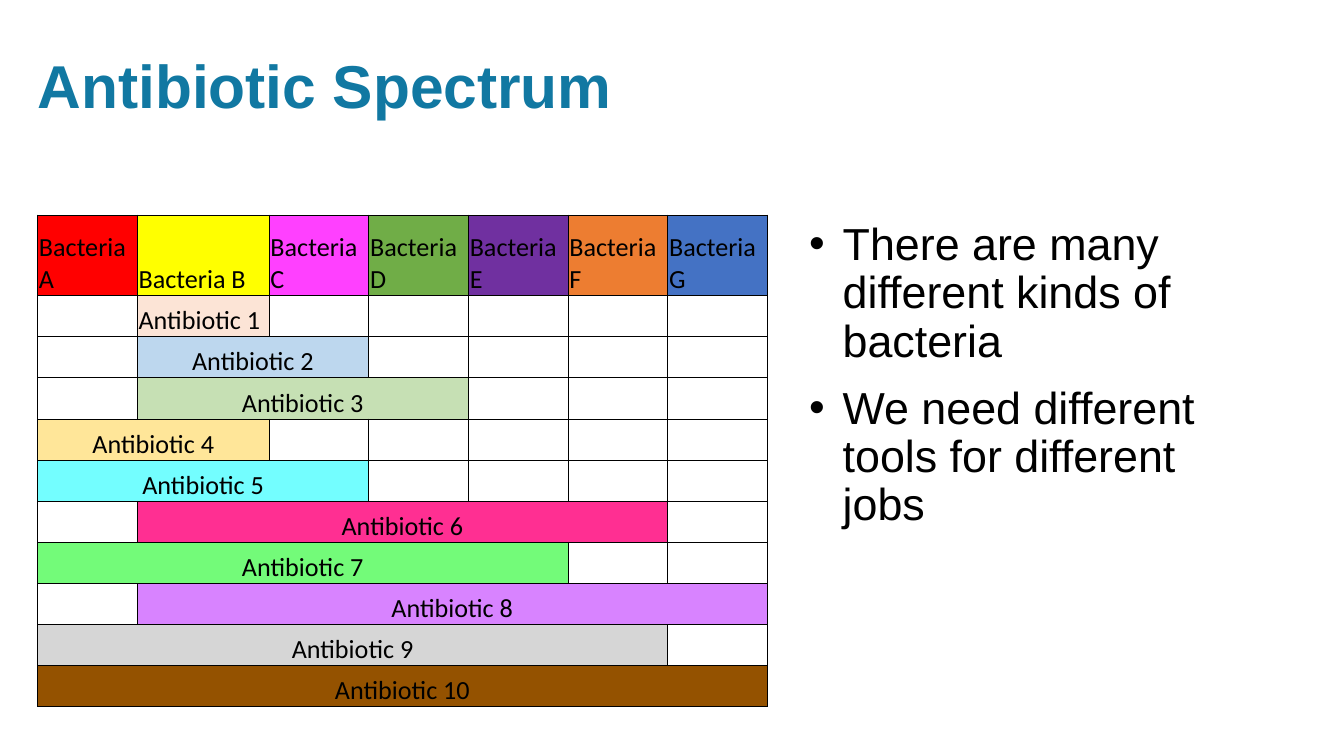
from dataclasses import dataclass

from lxml import etree
from pptx import Presentation
from pptx.dml.color import RGBColor
from pptx.enum.text import MSO_ANCHOR, MSO_AUTO_SIZE, PP_ALIGN
from pptx.oxml.ns import qn
from pptx.util import Inches, Pt

LEFT, CENTER = PP_ALIGN.LEFT, PP_ALIGN.CENTER
TOP, BOTTOM = MSO_ANCHOR.TOP, MSO_ANCHOR.BOTTOM
NO_FIT = MSO_AUTO_SIZE.NONE
TITLE_AND_CONTENT = 1


@dataclass(frozen=True)
class Theme:
    heading_font: str = "Arial"
    table_font: str = "Calibri"
    title_color: str = "1178A2"
    ink: str = "000000"
    title_size: float = 32.4
    list_size: float = 24
    table_size: float = 14
    border_width: float = 0.5
    leading: float = 0.9


THEME = Theme()
SLIDE_WIDTH = 10
SLIDE_HEIGHT = SLIDE_WIDTH * 9 / 16
LEFT_EDGE, CONTENT_TOP = 0.28, 1.6
TITLE_BOX = (LEFT_EDGE, 0.37, 4.48, 1.09)
SPECTRUM_BOX = (LEFT_EDGE, CONTENT_TOP, 5.43, 3.66)
LIST_BOX = (6.02, CONTENT_TOP, 3.37, 3.44)
HEADER_HEIGHT = 0.6
COLUMN_SHARES = [0.74, 0.98] + [0.74] * 5

BACTERIA_COLORS = ["FF0000", "FFFF00", "FF40FF", "70AD47", "7030A0", "ED7D31", "4472C4"]
ANTIBIOTICS = [
    (1, 1, "FCE4D6"),
    (1, 2, "BDD7EE"),
    (1, 3, "C6E0B4"),
    (0, 2, "FFE699"),
    (0, 3, "73FEFF"),
    (1, 5, "FF2F92"),
    (0, 5, "73FB79"),
    (1, 6, "D883FF"),
    (0, 6, "D6D6D6"),
    (0, 7, "945200"),
]
POINTS = [
    "There are many different kinds of bacteria",
    "We need different tools for different jobs",
]


def add_run(paragraph, text, font, size, color, bold=False):
    run = paragraph.add_run()
    run.text = text
    run.font.name = font
    run.font.size = Pt(size)
    run.font.bold = bold
    run.font.color.rgb = RGBColor.from_string(color)


def place(placeholder, box, right_inset):
    placeholder.left, placeholder.top, placeholder.width, placeholder.height = map(Inches, box)
    frame = placeholder.text_frame
    frame.word_wrap = True
    frame.auto_size = NO_FIT
    frame.vertical_anchor = TOP
    frame.margin_left, frame.margin_right = 0, Inches(right_inset)
    frame.margin_top = frame.margin_bottom = Inches(0.05)
    return frame


def build_title(slide, box):
    paragraph = place(slide.shapes.title, box, 0).paragraphs[0]
    paragraph.alignment = LEFT
    paragraph.line_spacing = THEME.leading
    add_run(paragraph, "Antibiotic Spectrum", THEME.heading_font,
            THEME.title_size, THEME.title_color, True)


def build_list(slide, box):
    frame = place(slide.placeholders[1], box, 0.1)
    for index, point in enumerate(POINTS):
        paragraph = frame.add_paragraph() if index else frame.paragraphs[0]
        properties = paragraph._p.get_or_add_pPr()
        properties.set("marL", str(Inches(0.25)))
        properties.set("indent", str(-Inches(0.25)))
        etree.SubElement(properties, qn("a:buFont"), typeface=THEME.heading_font)
        etree.SubElement(properties, qn("a:buChar"), char="•")
        paragraph.alignment = LEFT
        paragraph.line_spacing = THEME.leading
        paragraph.space_before = Pt(10 if index else 0)
        add_run(paragraph, point, THEME.heading_font, THEME.list_size, THEME.ink)


def format_cell(cell):
    cell.margin_left = cell.margin_right = cell.margin_top = Inches(0.01)
    cell.margin_bottom = 0
    cell.vertical_anchor = BOTTOM
    cell.fill.background()
    properties = cell._tc.get_or_add_tcPr()
    for position, side in enumerate(("lnL", "lnR", "lnT", "lnB")):
        border = etree.Element(qn(f"a:{side}"), w=str(Pt(THEME.border_width)))
        fill = etree.SubElement(border, qn("a:solidFill"))
        etree.SubElement(fill, qn("a:srgbClr"), val=THEME.ink)
        properties.insert(position, border)


def label_cell(cell, text, color, alignment):
    cell.fill.solid()
    cell.fill.fore_color.rgb = RGBColor.from_string(color)
    paragraph = cell.text_frame.paragraphs[0]
    paragraph.alignment = alignment
    add_run(paragraph, text, THEME.table_font, THEME.table_size, THEME.ink)


def build_spectrum(slide, box):
    left, top, width, height = box
    row_count = len(ANTIBIOTICS) + 1
    table = slide.shapes.add_table(row_count, len(BACTERIA_COLORS), *map(Inches, box)).table
    table.first_row = table.horz_banding = False
    for column, share in zip(table.columns, COLUMN_SHARES):
        column.width = Inches(width * share / sum(COLUMN_SHARES))
    for index, row in enumerate(table.rows):
        row.height = Inches((height - HEADER_HEIGHT) / len(ANTIBIOTICS) if index else HEADER_HEIGHT)
    for cell in table.iter_cells():
        format_cell(cell)

    for column, color in enumerate(BACTERIA_COLORS):
        label_cell(table.cell(0, column), f"Bacteria {'ABCDEFG'[column]}", color, LEFT)
    for row, (start, span, color) in enumerate(ANTIBIOTICS, 1):
        cell = table.cell(row, start)
        if span > 1:
            cell.merge(table.cell(row, start + span - 1))
        label_cell(cell, f"Antibiotic {row}", color, CENTER if span > 1 else LEFT)

    for cell in table.iter_cells():
        if not cell.text_frame.text:
            etree.SubElement(cell.text_frame.paragraphs[0]._p, qn("a:endParaRPr"),
                             sz=str(THEME.table_size * 100))


def main():
    deck = Presentation()
    deck.slide_width, deck.slide_height = Inches(SLIDE_WIDTH), Inches(SLIDE_HEIGHT)
    slide = deck.slides.add_slide(deck.slide_layouts[TITLE_AND_CONTENT])
    build_title(slide, TITLE_BOX)
    build_list(slide, LIST_BOX)
    build_spectrum(slide, SPECTRUM_BOX)
    deck.save("out.pptx")


if __name__ == "__main__":
    main()
